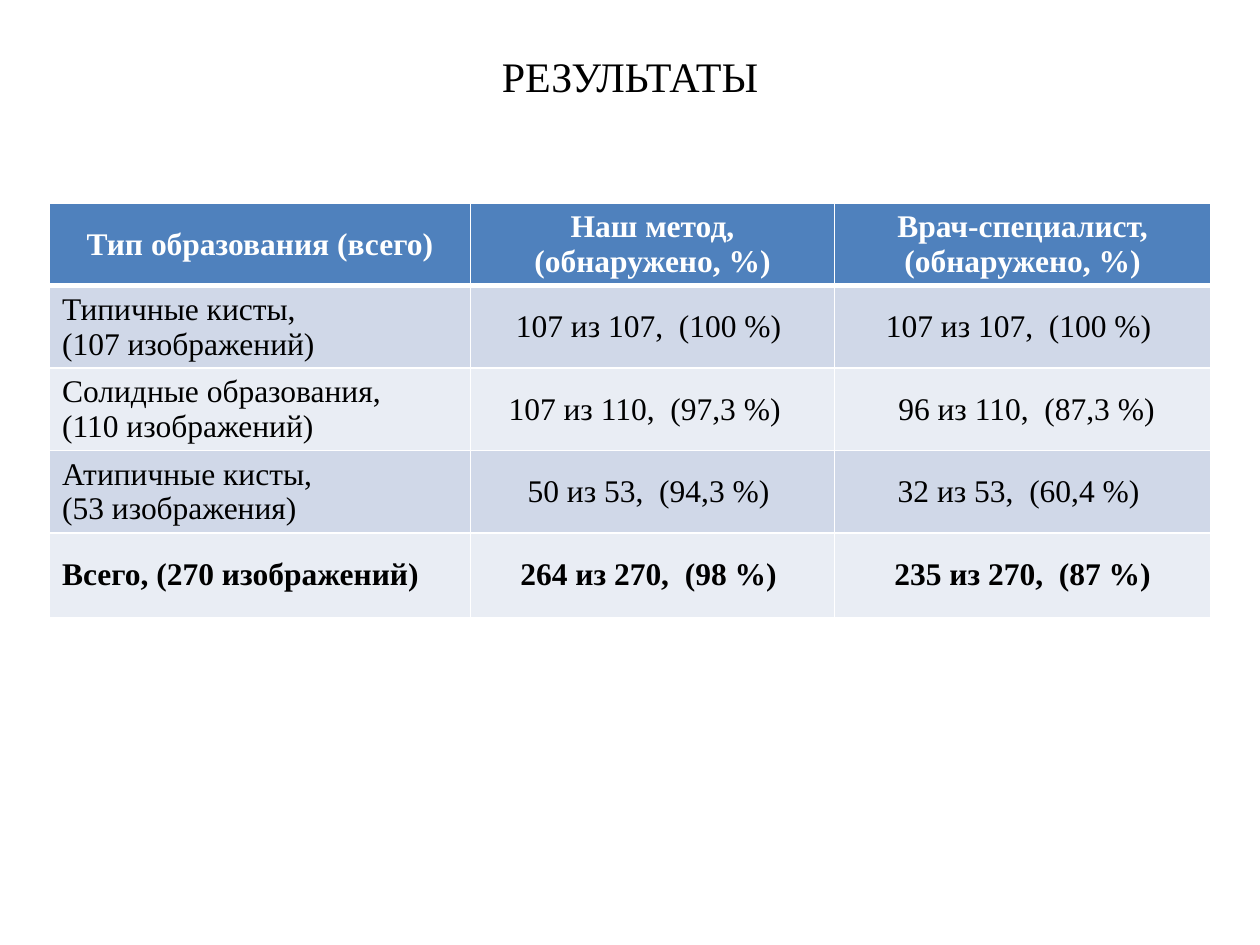
from lxml.etree import SubElement
from pptx import Presentation
from pptx.dml.color import RGBColor
from pptx.enum.text import MSO_ANCHOR, PP_ALIGN
from pptx.oxml.ns import qn
from pptx.util import Pt


def color(value):
    return RGBColor.from_string(value)


class ResultsSlide:
    FONT = "Times New Roman"
    BLACK, WHITE = "000000", "FFFFFF"
    HEADER, BANDS = "4F81BD", ("D0D8E8", "E9EDF4")

    def __init__(self, prs):
        self.s = prs.slides.add_slide(prs.slide_layouts[5])

    def add_text(self, tf, text, align, fill, size=18, bold=False):
        """One paragraph per line of text, all in the same format."""
        tf.word_wrap = True
        tf.vertical_anchor = MSO_ANCHOR.MIDDLE
        for i, line in enumerate(text.split("\n")):
            p = tf.add_paragraph() if i else tf.paragraphs[0]
            p.alignment = align
            r = p.add_run()
            r.text = line
            for name, value in {"name": self.FONT, "size": Pt(size), "bold": bold}.items():
                setattr(r.font, name, value)
            r.font.color.rgb = color(fill)

    def title(self, text, left, top, width, height):
        sp = self.s.shapes.title
        box = {"left": left, "top": top, "width": width, "height": height}
        for name, value in box.items():
            setattr(sp, name, Pt(value))
        self.add_text(sp.text_frame, text, PP_ALIGN.CENTER, self.BLACK, size=24)

    def borders(self, cell, **widths):
        tcPr = cell._tc.get_or_add_tcPr()
        for side, width in widths.items():
            ln = SubElement(tcPr, qn(f"a:ln{side}"), w=str(Pt(width)))
            fill = SubElement(ln, qn("a:solidFill"))
            SubElement(fill, qn("a:srgbClr"), val=self.WHITE)

    def table(self, rows, left, top, widths, heights):
        frame = self.s.shapes.add_table(
            len(rows), len(widths), Pt(left), Pt(top), Pt(sum(widths)), Pt(sum(heights)))
        table = frame.table
        for column, width in zip(table.columns, widths):
            column.width = Pt(width)
        for row, height in zip(table.rows, heights):
            row.height = Pt(height)
        last = len(rows) - 1
        for i, texts in enumerate(rows):
            header = i == 0
            for j, text in enumerate(texts):
                cell = table.cell(i, j)
                # The rule under the header is thicker than the others
                self.borders(cell, L=1, R=1, T=3 if i == 1 else 1, B=3 if header else 1)
                cell.fill.solid()
                cell.fill.fore_color.rgb = color(
                    self.HEADER if header else self.BANDS[(i - 1) % 2])
                left_aligned = j == 0 and not header
                self.add_text(cell.text_frame, text,
                              PP_ALIGN.LEFT if left_aligned else PP_ALIGN.CENTER,
                              self.WHITE if header else self.BLACK,
                              bold=i in (0, last))
                cell.vertical_anchor = MSO_ANCHOR.MIDDLE


def main():
    prs = Presentation()
    prs.slide_width, prs.slide_height = Pt(720), Pt(540)
    slide = ResultsSlide(prs)

    # Title
    slide.title("РЕЗУЛЬТАТЫ", 54, 2.2, 612, 82)

    # Detection results
    rows = [
        ("Тип образования (всего)", "Наш метод,\n(обнаружено, %)",
         "Врач-специалист,\n(обнаружено, %)"),
        ("Типичные кисты,\n(107 изображений)", "107 из 107,  (100 %) ",
         "107 из 107,  (100 %) "),
        ("Солидные образования,\n(110 изображений)", "107 из 110,  (97,3 %)  ",
         " 96 из 110,  (87,3 %)"),
        ("Атипичные кисты,\n(53 изображения)", "50 из 53,  (94,3 %) ",
         "32 из 53,  (60,4 %) "),
        ("Всего, (270 изображений)", "264 из 270,  (98 %) ", "235 из 270,  (87 %)"),
    ]
    slide.table(rows, 28.3, 116.2, widths=(240.5, 208.2, 214.8),
                heights=[47] * 4 + [48.2])

    prs.save("out.pptx")


if __name__ == "__main__":
    main()
